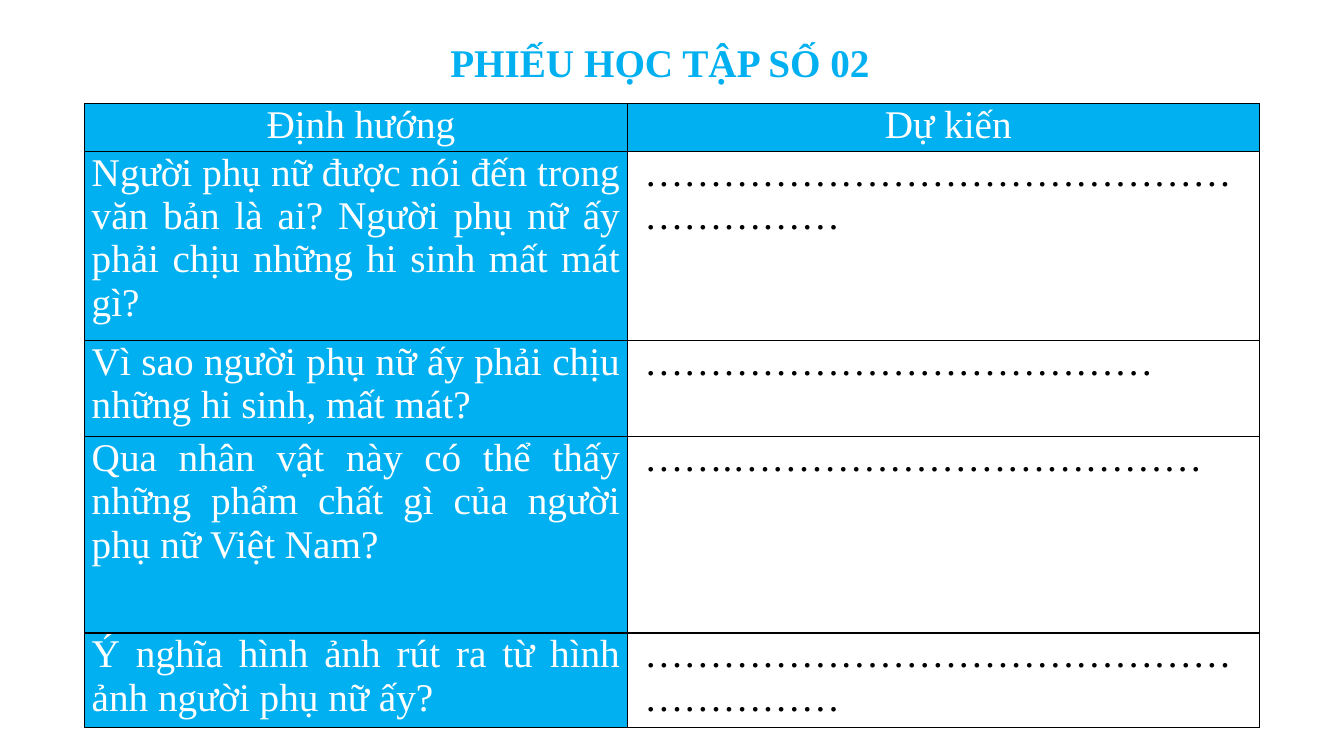
from pptx import Presentation
from pptx.util import Inches, Pt
from pptx.dml.color import RGBColor as RGB
from pptx.enum.text import PP_ALIGN as Align, MSO_ANCHOR as Anchor, MSO_AUTO_SIZE as Auto
from pptx.oxml import parse_xml

NS = 'xmlns:a="http://schemas.openxmlformats.org/drawingml/2006/main"'
BLUE, WHITE, BLACK = "00B0F0", "FFFFFF", "000000"


def style(para, color, bold=False):
    for run in para.runs:
        font = run.font
        font.name, font.size, font.bold = "Times New Roman", Pt(28), bold
        font.color.rgb = RGB.from_string(color)


def border(cell):
    for side in "LRTB":
        cell._tc.get_or_add_tcPr().append(parse_xml(
            f'<a:ln{side} {NS} w="12700"><a:solidFill><a:srgbClr val="{BLACK}"/>'
            f'</a:solidFill></a:ln{side}>'))


deck = Presentation()
deck.slide_width, deck.slide_height = Inches(13.33), Inches(7.5)
slide = deck.slides.add_slide(deck.slide_layouts[5])

# Title
title = slide.shapes.title
title.left, title.top = Inches(3.21), Inches(0.3)
title.width, title.height = Inches(6.67), Inches(0.57)
frame = title.text_frame
frame.text = "PHIẾU HỌC TẬP SỐ 02"
frame.word_wrap = True
frame.auto_size = Auto.SHAPE_TO_FIT_TEXT
frame.vertical_anchor = Anchor.TOP
para = frame.paragraphs[0]
para.alignment = Align.CENTER
para.line_spacing, para.space_after = 1.07, Pt(8)
style(para, BLUE, True)

# Worksheet table: height, prompt, answer line
rows = [
    (0.47, "Định hướng", "Dự kiến"),
    (1.88, "Người phụ nữ được nói đến trong văn bản là ai? "
           "Người phụ nữ ấy phải chịu những hi sinh mất mát gì?", "…" * 54),
    (0.95, "Vì sao người phụ nữ ấy phải chịu những hi sinh, mất mát?", "…" * 39),
    (1.95, "Qua nhân vật này có thể thấy những phẩm chất gì của người "
           "phụ nữ Việt Nam?", "……." + "…" * 36),
    (0.93, "Ý nghĩa hình ảnh rút ra từ hình ảnh người phụ nữ ấy?", "…" * 54),
]
# Dot leaders hold three dots per character
rows = [(high, ask, reply) for high, ask, reply in rows]
dots = {1: "……………………………………………………", 2: "…………………………………",
        3: "…….………………………………", 4: "……………………………………………………"}
table = slide.shapes.add_table(len(rows), 2, Inches(0.84), Inches(1.03),
                               Inches(11.65), Inches(6.18)).table
table.first_row = table.horz_banding = False
for col, width in zip(table.columns, (5.38, 6.27)):
    col.width = Inches(width)

for r, (high, ask, reply) in enumerate(rows):
    table.rows[r].height = Inches(high)
    for c, text in enumerate((ask, dots.get(r, reply))):
        cell = table.cell(r, c)
        border(cell)
        cell.margin_left = cell.margin_right = Inches(0.07)
        cell.margin_top = cell.margin_bottom = 0
        cell.text_frame.text = text
        para = cell.text_frame.paragraphs[0]
        head, open_cell = r == 0, r > 0 and c == 1
        if head:
            para.alignment = Align.CENTER
        else:
            para.alignment = Align.LEFT if open_cell else Align.JUSTIFY
        if head or open_cell:
            para._p.get_or_add_pPr().set("marL", str(Inches(0.1)))
        if open_cell:
            cell.fill.background()
        else:
            cell.fill.solid()
            cell.fill.fore_color.rgb = RGB.from_string(BLUE)
        style(para, BLACK if open_cell else WHITE)

deck.save("out.pptx")
